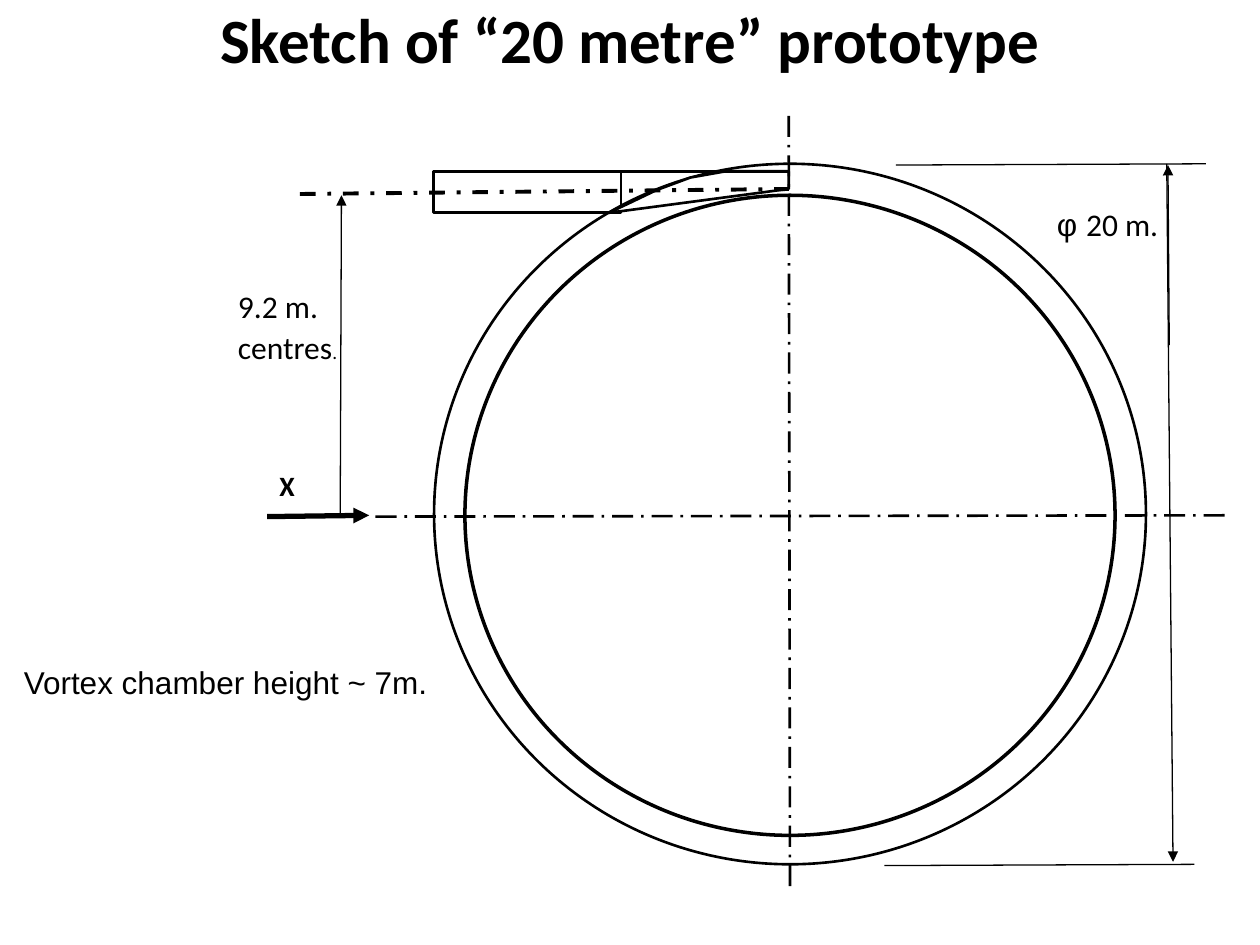
from dataclasses import dataclass
from pptx import Presentation
from pptx.dml.color import RGBColor
from pptx.enum.dml import MSO_LINE
from pptx.enum.shapes import MSO_CONNECTOR, MSO_SHAPE
from pptx.enum.text import MSO_ANCHOR, MSO_AUTO_SIZE, PP_ALIGN
from pptx.oxml.ns import qn
from pptx.util import Inches, Pt
from lxml.etree import SubElement


@dataclass(frozen=True)
class Theme:
    ink: RGBColor = RGBColor(0, 0, 0)
    paper: RGBColor = RGBColor(255, 255, 255)
    sans: str = "Calibri"
    plain: str = "Arial"
    head: int = 36
    body: int = 18
    mark: int = 16
    tiny: int = 11
    thin: float = 0.75
    line: float = 1.5
    wall: float = 2
    axis: float = 2.25
    flow: float = 3


T = Theme()
COLS, ROWS = 100, 75
UNIT = Inches(10) // COLS


def grid(*vals):
    return [round(val * UNIT) for val in vals]


def add_run(para, text, size, face=T.sans, bold=False):
    run = para.add_run()
    run.text = text
    font = run.font
    font.size, font.name, font.bold = Pt(size), face, bold
    font.color.rgb = T.ink


def add_title(slide, text):
    title = slide.shapes.title
    title.left, title.top, title.width, title.height = grid(5, 0, 90, 6.1)
    frame = title.text_frame
    frame.vertical_anchor = MSO_ANCHOR.MIDDLE
    para = frame.paragraphs[0]
    para.alignment = PP_ALIGN.CENTER
    add_run(para, text, T.head, bold=True)


def add_label(slide, place, runs, lead=1.07):
    frame = slide.shapes.add_textbox(*grid(*place)).text_frame
    frame.word_wrap = True
    frame.auto_size = MSO_AUTO_SIZE.NONE
    para = frame.paragraphs[0]
    para.line_spacing = lead
    for run in runs:
        add_run(para, *run)


def style(shape, width, fill=None):
    shape.shadow.inherit = False
    if fill is None:
        shape.fill.background()
    else:
        shape.fill.solid()
        shape.fill.fore_color.rgb = fill
    shape.line.color.rgb = T.ink
    shape.line.width = Pt(width)


def add_form(slide, kind, place, width, fill=None):
    style(slide.shapes.add_shape(kind, *grid(*place)), width, fill)


def add_ring(slide, mid, size, width, fill=None):
    place = [m - s / 2 for m, s in zip(mid, size)]
    add_form(slide, MSO_SHAPE.OVAL, (*place, *size), width, fill)


def add_path(slide, points, width, fill):
    start, *rest = [grid(*point) for point in points]
    build = slide.shapes.build_freeform(*start)
    build.add_line_segments(rest, close=True)
    style(build.convert_to_shape(), width, fill)


def add_line(slide, start, end, width=T.thin, dash=None, arrow=False):
    link = slide.shapes.add_connector(
        MSO_CONNECTOR.STRAIGHT, *grid(*start, *end))
    link.line.color.rgb = T.ink
    link.line.width = Pt(width)
    if dash:
        link.line.dash_style = dash
    props = link._element.spPr
    if arrow:
        SubElement(props.find(qn("a:ln")), qn("a:tailEnd"), type="triangle")
    SubElement(props, qn("a:effectLst"))


def main():
    deck = Presentation()
    deck.slide_width, deck.slide_height = grid(COLS, ROWS)
    slide = deck.slides.add_slide(deck.slide_layouts[5])
    long_dash = MSO_LINE.LONG_DASH_DOT

    add_title(slide, "Sketch of “20 metre” prototype")
    add_ring(slide, (62.7, 40.8), (56.5, 55.6), T.line, T.paper)
    add_ring(slide, (62.7, 40.9), (51.6, 50.8), T.wall)

    add_line(slide, (70.2, 68.7), (94.8, 68.6))
    add_line(slide, (92.6, 13), (93.1, 68.4), arrow=True)
    add_form(slide, MSO_SHAPE.RECTANGLE, (34.4, 13.6, 14.9, 3.3), T.line)
    add_line(slide, (29.8, 41), (97.2, 40.9), T.line, long_dash)
    add_line(slide, (71.1, 13.1), (95.7, 13))
    add_line(slide, (92.8, 27.4), (92.7, 13.1), arrow=True)
    add_line(slide, (21.2, 41), (29.3, 40.9), T.flow, arrow=True)

    inlet = [(57.6, 13.6), (62.6, 13.6), (62.6, 15), (48.3, 16.9),
             (49.8, 16.2), (52.1, 15.1), (54.8, 14.1)]
    add_path(slide, inlet, T.line, T.paper)
    add_line(slide, (62.6, 9.2), (62.7, 70.5), T.line, long_dash)
    add_line(slide, (49.1, 13.6), (62.6, 13.6), T.line)
    add_line(slide, (23.8, 15.4), (62.6, 15), T.axis, MSO_LINE.DASH_DOT)
    add_line(slide, (27, 41), (27.1, 15.5), arrow=True)

    add_label(slide, (82.9, 15.6, 10.7, 5),
              [("φ ", T.body, T.plain), ("20 m.", T.body)])
    add_label(slide, (17.9, 22.1, 15, 6.1),
              [("9.2 m. centres", T.body), (".", T.tiny)])
    add_label(slide, (21.2, 36.5, 6.6, 3.2), [("X", T.mark, T.sans, True)])
    add_label(slide, (0.9, 52.1, 35.5, 4),
              [("Vortex chamber height ~ 7m.", T.body, T.plain)], 1)
    deck.save("out.pptx")


if __name__ == "__main__":
    main()
